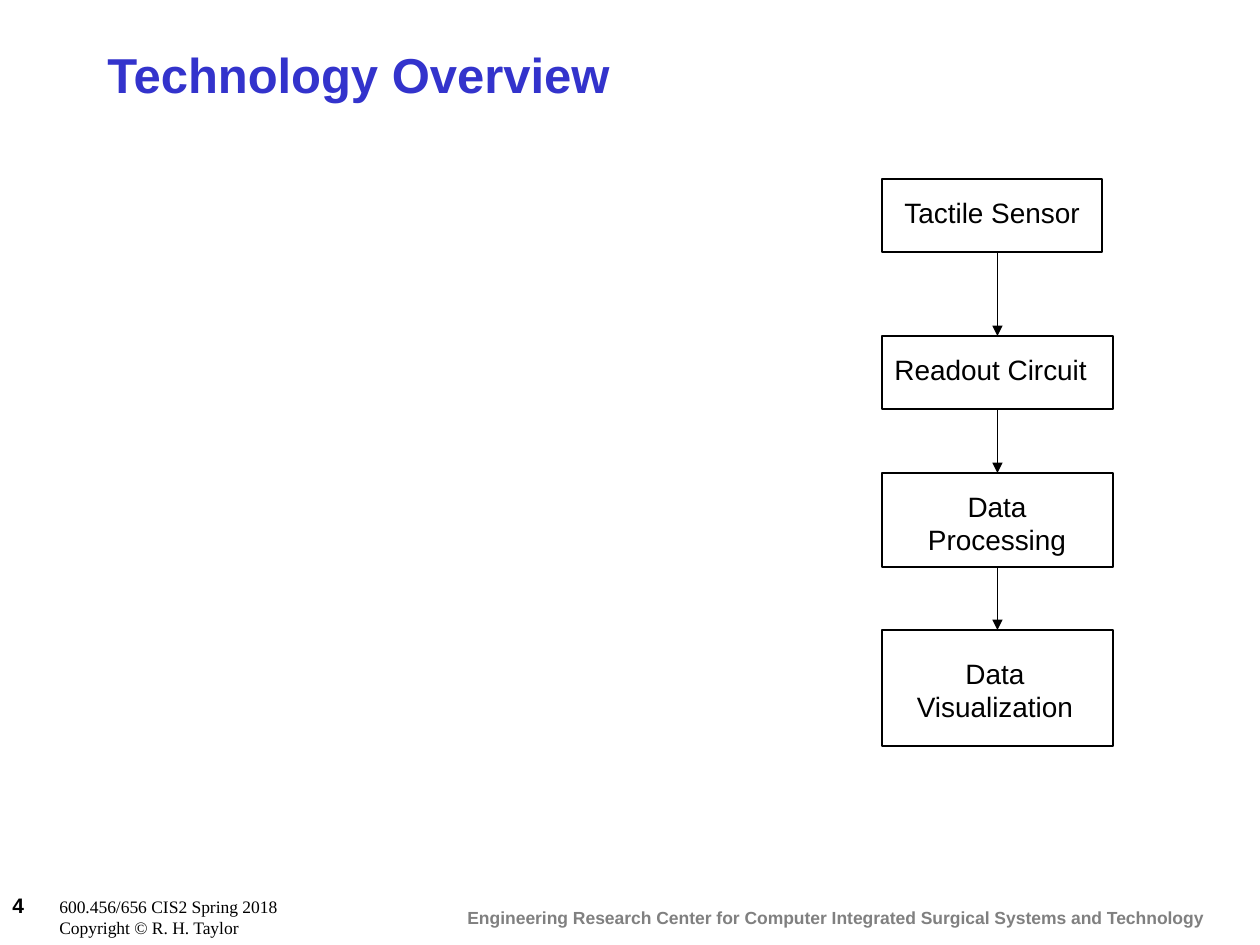
from lxml.etree import SubElement
from pptx import Presentation
from pptx.dml.color import RGBColor
from pptx.enum.shapes import MSO_CONNECTOR, MSO_SHAPE
from pptx.enum.text import MSO_ANCHOR, PP_ALIGN
from pptx.oxml.ns import qn
from pptx.util import Emu, Pt

BLACK = RGBColor(0x00, 0x00, 0x00)
WHITE = RGBColor(0xFF, 0xFF, 0xFF)
BLUE = RGBColor(0x33, 0x33, 0xCC)
GRAY = RGBColor(0x80, 0x80, 0x80)

TITLE = {"name": "Arial", "size": Pt(28), "bold": True, "color": BLUE}
LABEL = {"name": "Arial", "size": Pt(16), "bold": False, "color": BLACK}
CENTER = {"name": "Arial", "size": Pt(10), "bold": True, "color": GRAY}
NUMBER = {"name": "Arial", "size": Pt(12), "bold": True, "color": BLACK}
COURSE = {"name": "Times New Roman", "size": Pt(10), "bold": False, "color": BLACK}

STAGES = [
    {"lines": ["Tactile Sensor"], "box": (0, 0, 220, 73), "label": (10, 10, 220, 47)},
    {"lines": ["Readout Circuit"], "box": (0, 157, 231, 73), "label": (0, 10, 220, 47)},
    {"lines": ["Data", "Processing"], "box": (0, 294, 231, 94), "label": (10, 10, 210, 81)},
    {"lines": ["Data Visualization"], "box": (0, 451, 231, 116), "label": (6, 20, 214, 81)},
]


def px(length):
    """Turn pixels into EMU."""
    return Emu(round(length * 914400 / 126))


def set_format(font, values):
    """Apply a dict of format values to a font."""
    for name, value in values.items():
        if name == "color":
            font.color.rgb = value
        else:
            setattr(font, name, value)


def add_text(slide, box, paragraphs, alignment=PP_ALIGN.LEFT, anchor=MSO_ANCHOR.TOP, wrap=True, hanging=0):
    """Add a text box whose paragraphs are lists of (text, format) runs."""
    text_frame = slide.shapes.add_textbox(*map(px, box)).text_frame
    text_frame.word_wrap = wrap
    text_frame.vertical_anchor = anchor
    for index, runs in enumerate(paragraphs):
        paragraph = text_frame.add_paragraph() if index else text_frame.paragraphs[0]
        paragraph.alignment = alignment
        if hanging:
            properties = paragraph._p.get_or_add_pPr()
            properties.set("marL", str(px(hanging)))
            properties.set("indent", str(px(-hanging)))
        for text, values in runs:
            run = paragraph.add_run()
            run.text = text
            set_format(run.font, values)


def add_stage(slide, left, top, stage):
    """Add one outlined stage with its label and return the rectangle."""
    x, y, width, height = stage["box"]
    rectangle = slide.shapes.add_shape(
        MSO_SHAPE.RECTANGLE, px(left + x), px(top + y), px(width), px(height)
    )
    rectangle.shadow.inherit = False
    rectangle.fill.solid()
    rectangle.fill.fore_color.rgb = WHITE
    rectangle.line.color.rgb = BLACK
    rectangle.line.width = Pt(0.75)
    label_x, label_y, label_width, label_height = stage["label"]
    alignment = PP_ALIGN.CENTER if label_height > 47 else PP_ALIGN.LEFT
    label_box = (left + x + label_x, top + y + label_y, label_width, label_height)
    add_text(slide, label_box, [[(line, LABEL)] for line in stage["lines"]], alignment)
    return rectangle


def add_arrow(slide, source, target):
    """Add a vertical arrow down to the top middle of the target."""
    middle = target.left + target.width // 2
    arrow = slide.shapes.add_connector(
        MSO_CONNECTOR.STRAIGHT, middle, source.top + source.height, middle, target.top
    )
    if source.width == target.width:
        arrow.begin_connect(source, 2)
    arrow.end_connect(target, 0)
    arrow.line.color.rgb = BLACK
    arrow.line.width = Pt(0.75)
    SubElement(arrow.line._get_or_add_ln(), qn("a:tailEnd"), type="triangle")
    SubElement(arrow._element.spPr, qn("a:effectLst"))


def add_flowchart(slide, left, top):
    """Add the column of stages joined by arrows."""
    rectangles = [add_stage(slide, left, top, stage) for stage in STAGES]
    for source, target in zip(rectangles, rectangles[1:]):
        add_arrow(slide, source, target)


def add_footer(slide, left, top):
    """Add the center name, the slide number and the course lines."""
    center = "Engineering Research Center for Computer Integrated Surgical Systems and Technology"
    add_text(slide, (left + 455, top + 15, 764, 34), [[(center, CENTER)]], wrap=False)
    course = [
        [("4\t", NUMBER), ("600.456/656 CIS2 Spring 2018", COURSE)],
        [("\tCopyright © R. H. Taylor", COURSE)],
    ]
    add_text(slide, (left, top, 514, 59), course, hanging=47)


def main():
    """Build and save the presentation."""
    presentation = Presentation()
    presentation.slide_width = px(1260)
    presentation.slide_height = px(945)
    slide = presentation.slides.add_slide(presentation.slide_layouts[6])
    add_footer(slide, 0, 886)
    add_text(slide, (95, 32, 1071, 84), [[("Technology Overview", TITLE)]], anchor=MSO_ANCHOR.MIDDLE)
    add_flowchart(slide, 882, 179)
    presentation.save("out.pptx")


if __name__ == "__main__":
    main()
